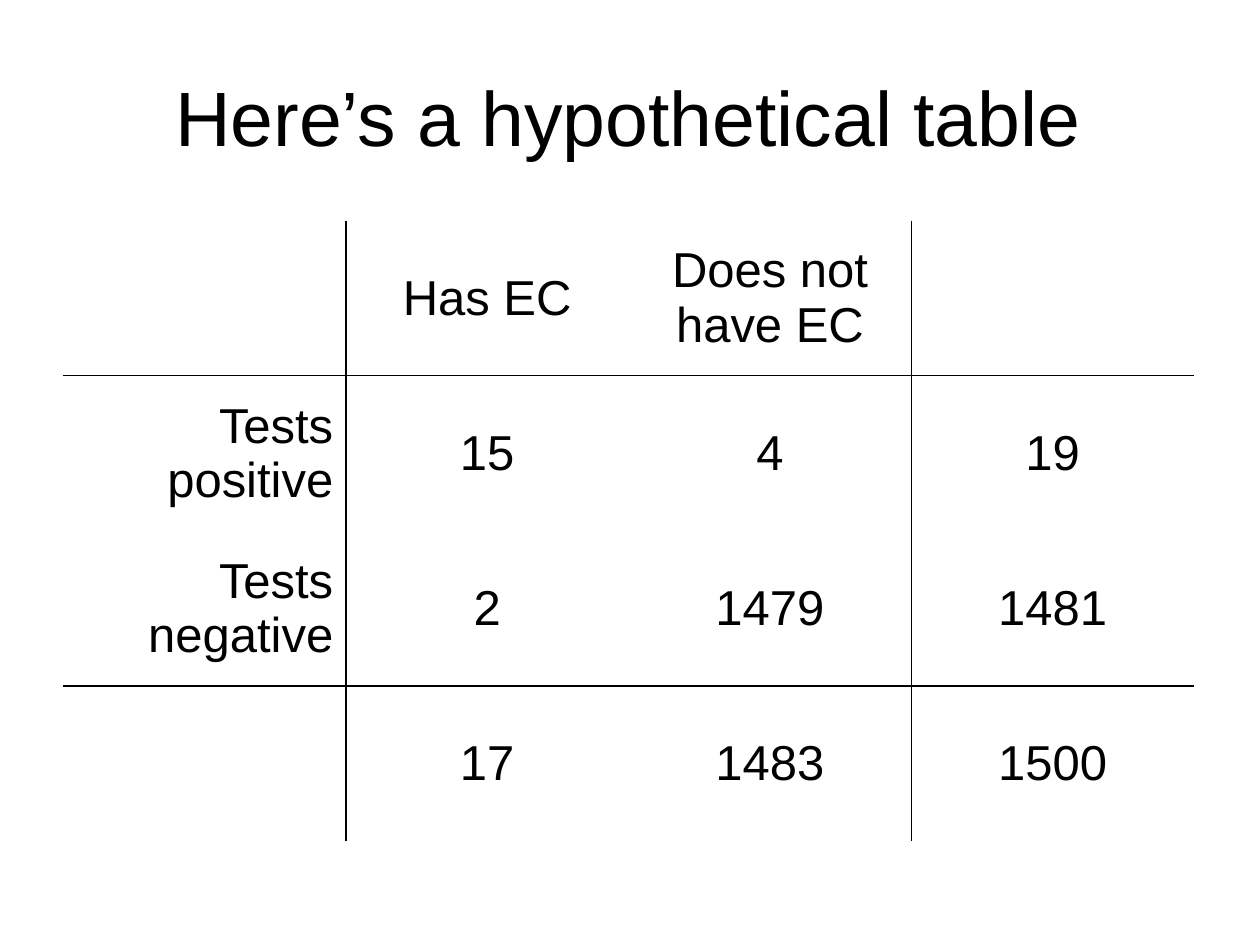
import pptx
import pptx.util
import pptx.dml.color
import pptx.enum.text
import pptx.oxml
import pptx.oxml.ns

Pt = pptx.util.Pt
ALIGN = pptx.enum.text.PP_ALIGN
MIDDLE = pptx.enum.text.MSO_ANCHOR.MIDDLE
COLORS = {"ink": "000000"}

ROWS = [
    ["", "Has EC", "Does not have EC", ""],
    ["Tests positive", "15", "4", "19"],
    ["Tests negative", "2", "1479", "1481"],
    ["", "17", "1483", "1500"],
]
RULED = (0, 2)  # rows and columns followed by a line
LEFT, WIDTH = 36, 646.4
TOP, HEIGHT = 126, 354.8


def style(par, size, align):
    par.alignment = align
    par.font.name = "Arial"
    par.font.size = Pt(size)
    par.font.color.rgb = pptx.dml.color.RGBColor.from_string(COLORS["ink"])


def border(cell, sides):
    """Draw the sides named in sides (of L, R, T, B) and clear the others."""
    props = cell._tc.get_or_add_tcPr()
    for spot, side in enumerate("LRTB"):
        fill = "<a:noFill/>"
        if side in sides:
            fill = f'<a:solidFill><a:srgbClr val="{COLORS["ink"]}"/></a:solidFill>'
        line = pptx.oxml.parse_xml(
            f'<a:ln{side} {pptx.oxml.ns.nsdecls("a")} w="{Pt(1)}">{fill}</a:ln{side}>'
        )
        props.insert(spot, line)


deck = pptx.Presentation()
deck.slide_width, deck.slide_height = Pt(720), Pt(540)
slide = deck.slides.add_slide(deck.slide_layouts[6])

title = slide.shapes.add_textbox(Pt(LEFT), Pt(21.6), Pt(WIDTH), Pt(88.6)).text_frame
title.word_wrap = True
title.vertical_anchor = MIDDLE
title.text = "Here’s a hypothetical table"
style(title.paragraphs[0], 44, ALIGN.CENTER)

count = len(ROWS)
table = slide.shapes.add_table(
    count, count, Pt(LEFT), Pt(TOP), Pt(WIDTH), Pt(HEIGHT)
).table
table.first_row = table.horz_banding = False
for col in table.columns:
    col.width = Pt(WIDTH / count)
for row in table.rows:
    row.height = Pt(HEIGHT / count)

for r, texts in enumerate(ROWS):
    for c, text in enumerate(texts):
        cell = table.cell(r, c)
        cell.text = text
        cell.vertical_anchor = MIDDLE
        cell.fill.background()
        par = cell.text_frame.paragraphs[0]
        par.space_before = Pt(8)
        style(par, 28, ALIGN.CENTER if c else ALIGN.RIGHT)
        tests = {"L": c - 1, "R": c, "T": r - 1, "B": r}
        border(cell, [side for side, edge in tests.items() if edge in RULED])

deck.save("out.pptx")
